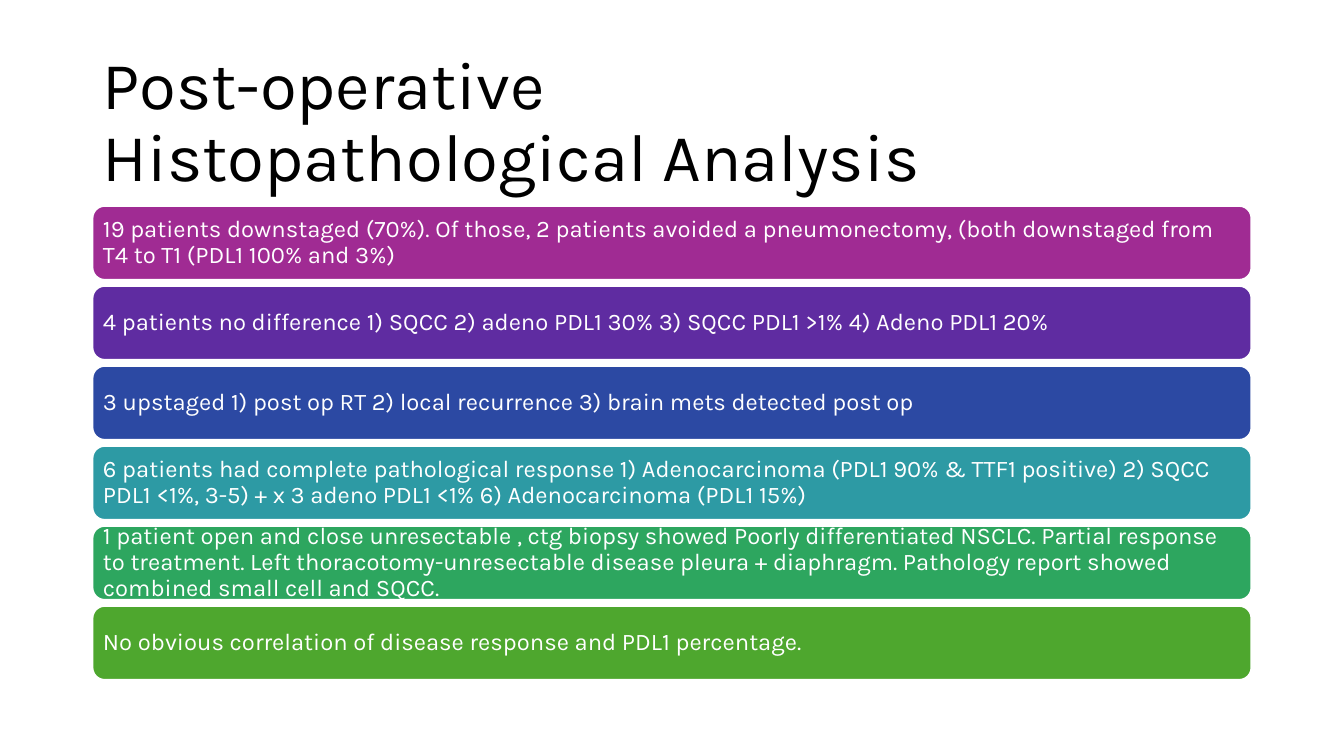
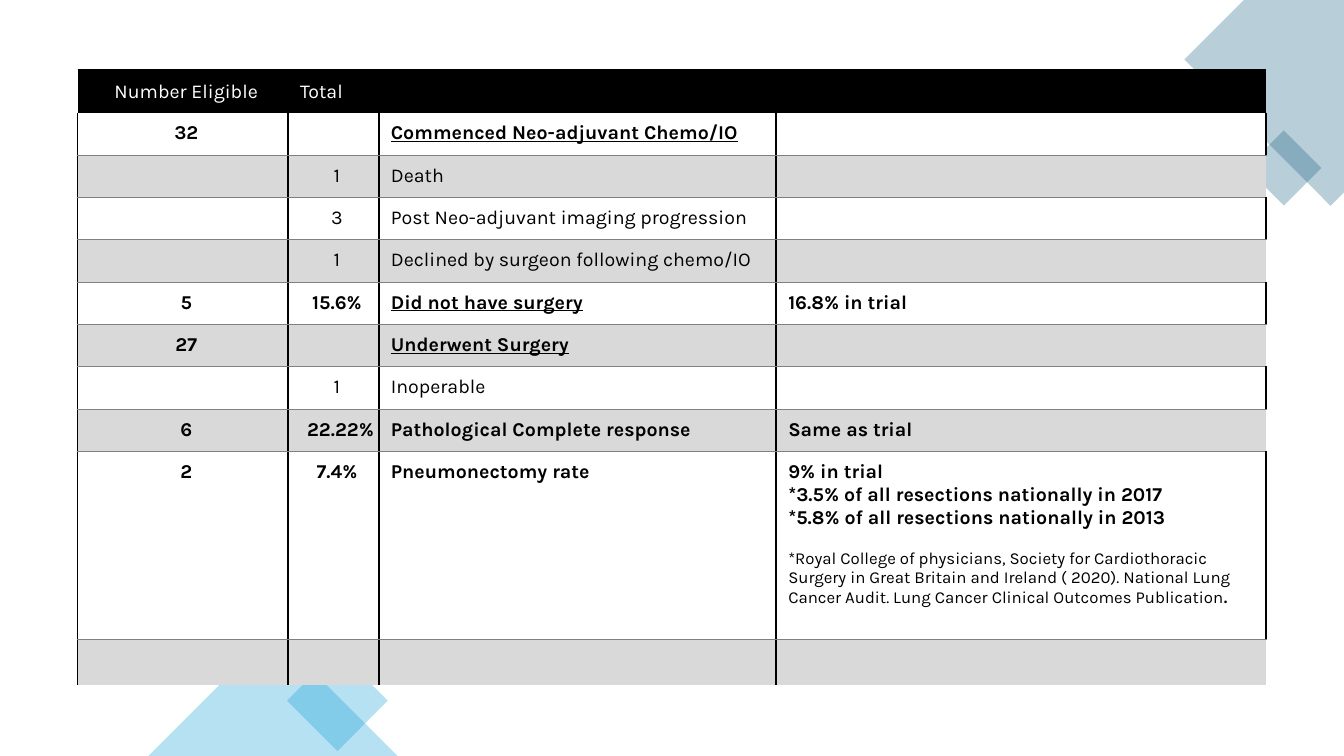
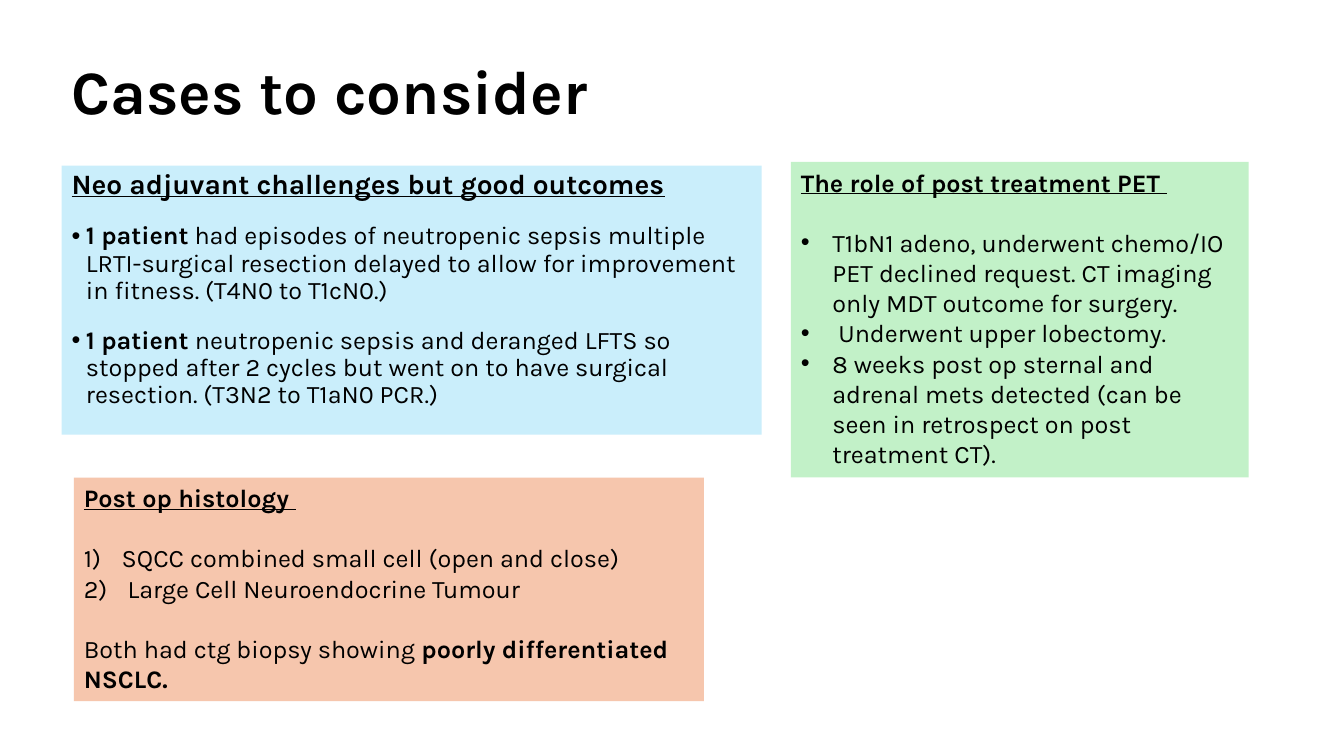
from dataclasses import dataclass

from lxml import etree
from pptx import Presentation
from pptx.dml.color import RGBColor
from pptx.enum.shapes import MSO_SHAPE
from pptx.enum.text import MSO_ANCHOR, PP_ALIGN
from pptx.oxml.ns import qn
from pptx.util import Pt

ROUNDED, RECTANGLE, TRIANGLE = (
    MSO_SHAPE.ROUNDED_RECTANGLE, MSO_SHAPE.RECTANGLE, MSO_SHAPE.ISOSCELES_TRIANGLE)
TOP, MIDDLE = MSO_ANCHOR.TOP, MSO_ANCHOR.MIDDLE
LEFT, CENTER, RIGHT = PP_ALIGN.LEFT, PP_ALIGN.CENTER, PP_ALIGN.RIGHT
NO_TABLE_STYLE = "{2D5ABB26-0587-4C30-8999-92F81FD0307C}"


@dataclass(frozen=True)
class Theme:
    font: str = "Karla"
    black: str = "000000"
    white: str = "FFFFFF"
    band: str = "D9D9D9"
    rule: str = "808080"
    teal: str = "156082"
    sky: str = "0F9ED5"
    pale_blue: str = "CAEEFB"
    pale_green: str = "C2F1C8"
    pale_orange: str = "F6C6AD"
    findings: tuple = ("A02B93", "5F2CA1", "2C49A3", "2D9AA4", "2DA65F", "4EA72E")
    long_title: float = 48
    title: float = 44
    heading: float = 20
    body: float = 18
    finding: float = 17
    cell: float = 14
    citation: float = 12
    tight: float = 0.9


theme = Theme()


def write(paragraph, text, size, color=theme.black, bold=False, underline=False,
          spacing=None, before=None, after=None, bullet=None, indent=0):
    """Fill a paragraph; text between ** marks is bold, bullet is a character or "1)"."""
    if bullet:
        properties = paragraph._p.get_or_add_pPr()
        properties.set("marL", str(Pt(indent)))
        properties.set("indent", str(-Pt(indent)))
        if bullet == "1)":
            etree.SubElement(properties, qn("a:buAutoNum"), type="arabicParenR")
        else:
            etree.SubElement(properties, qn("a:buFont"), typeface="Arial")
            etree.SubElement(properties, qn("a:buChar"), char=bullet)
    if spacing:
        paragraph.line_spacing = spacing
    if before:
        paragraph.space_before = Pt(before)
    if after:
        paragraph.space_after = Pt(after)
    font = paragraph.font
    font.name, font.size = theme.font, Pt(size)
    font.bold, font.underline = bold, underline
    font.color.rgb = RGBColor.from_string(color)
    for position, piece in enumerate(text.split("**")):
        if piece:
            run = paragraph.add_run()
            run.text = piece
            if position % 2:
                run.font.bold = True


def add_text_box(slide, left, top, width, height, anchor=TOP, fill=None):
    box = slide.shapes.add_textbox(Pt(left), Pt(top), Pt(width), Pt(height))
    box.text_frame.word_wrap = True
    box.text_frame.vertical_anchor = anchor
    if fill:
        box.fill.solid()
        box.fill.fore_color.rgb = RGBColor.from_string(fill)
    return box.text_frame


presentation = Presentation()
presentation.slide_width, presentation.slide_height = Pt(960), Pt(540)
blank = presentation.slide_layouts[6]

# Slide 1: findings
slide = presentation.slides.add_slide(blank)
frame = add_text_box(slide, 66, 44, 828, 89, MIDDLE)
frame.margin_right = Pt(160)
write(frame.paragraphs[0], "Post-operative Histopathological Analysis",
      theme.long_title, spacing=theme.tight)

findings = [
    "19 patients downstaged (70%). Of those, 2 patients avoided a pneumonectomy, "
    "(both downstaged from T4 to T1 (PDL1 100% and 3%)",
    "4 patients no difference 1) SQCC 2) adeno PDL1 30% 3) SQCC PDL1 >1% 4) Adeno PDL1 20%",
    "3 upstaged 1) post op RT 2) local recurrence 3) brain mets detected post op",
    "6 patients had complete pathological response 1) Adenocarcinoma (PDL1 90% & TTF1 "
    "positive) 2) SQCC PDL1 <1%, 3-5) + x 3 adeno PDL1 <1% 6) Adenocarcinoma (PDL1 15%)",
    "1 patient open and close unresectable , ctg biopsy showed Poorly differentiated NSCLC. "
    "Partial response to treatment. Left thoracotomy-unresectable disease pleura + diaphragm. "
    "Pathology report showed combined small cell and SQCC.",
    "No obvious correlation of disease response and PDL1 percentage.",
]
for index, (finding, color) in enumerate(zip(findings, theme.findings)):
    bar = slide.shapes.add_shape(ROUNDED, Pt(66), Pt(147 + 57.15 * index), Pt(828), Pt(53))
    bar.shadow.inherit = False
    bar.fill.solid()
    bar.fill.fore_color.rgb = RGBColor.from_string(color)
    bar.line.color.rgb = RGBColor.from_string(theme.white)
    bar.line.width = Pt(1.5)
    frame = bar.text_frame
    frame.word_wrap = True
    frame.vertical_anchor = MIDDLE
    frame.margin_left = frame.margin_right = frame.margin_top = frame.margin_bottom = Pt(5)
    paragraph = frame.paragraphs[0]
    paragraph.alignment = LEFT
    write(paragraph, finding, theme.finding, theme.white, spacing=theme.tight)

# Slide 2: outcome table over corner decorations
slide = presentation.slides.add_slide(blank)
outline = slide.shapes.build_freeform(Pt(960), Pt(0))
outline.add_line_segments(
    [(Pt(x), Pt(y)) for x, y in [(888.5, 0), (846, 42.5), (950.4, 147), (960, 137.5)]])
decorations = [(outline.convert_to_shape(), theme.teal, 0)]
for preset, left, top, width, height, color, rotation in [
    (RECTANGLE, 898, 101, 38, 38, theme.teal, 45),
    (RECTANGLE, 215.5, 475, 51, 51, theme.sky, 45),
    (TRIANGLE, 106, 451, 178, 89, theme.sky, 0),
]:
    shape = slide.shapes.add_shape(preset, Pt(left), Pt(top), Pt(width), Pt(height))
    decorations.append((shape, color, rotation))
for shape, color, rotation in decorations:
    shape.rotation = rotation
    shape.shadow.inherit = False
    shape.line.fill.background()
    shape.fill.solid()
    shape.fill.fore_color.rgb = RGBColor.from_string(color)
    color_element = shape._element.spPr.find(qn("a:solidFill")).find(qn("a:srgbClr"))
    etree.SubElement(color_element, qn("a:alpha"), val="30000")

# Each row: its four texts, and the columns that are bold and underlined
rows = [
    (["Number Eligible", "Total", "", ""], (), ()),
    (["32", "", "Commenced Neo-adjuvant Chemo/IO", ""], (0, 2), (2,)),
    (["", "1", "Death", ""], (), ()),
    (["", "3", "Post Neo-adjuvant imaging progression", ""], (), ()),
    (["", "1", "Declined by surgeon following chemo/IO", ""], (), ()),
    (["5", "15.6%", "Did not have surgery", "16.8% in trial"], (0, 1, 2, 3), (2,)),
    (["27", "", "Underwent Surgery", ""], (0, 2), (2,)),
    (["", "1", "Inoperable", ""], (), ()),
    (["6", "22.22%", "Pathological Complete response", "Same as trial"], (0, 1, 2, 3), ()),
    (["2", "7.4%", "Pneumonectomy rate", "9% in trial"], (0, 1, 2, 3), ()),
    (["", "", "", ""], (), ()),
]
column_widths = [150.5, 64.8, 283.9, 349.7]
row_heights = [30.25] * 9 + [134.5, 32.5]
graphic = slide.shapes.add_table(len(rows), 4, Pt(55.4), Pt(50.2),
                                 Pt(sum(column_widths)), Pt(sum(row_heights)))
table = graphic.table
table.first_row = table.horz_banding = False
table._tbl.tblPr.find(qn("a:tableStyleId")).text = NO_TABLE_STYLE
for column, width in zip(table.columns, column_widths):
    column.width = Pt(width)

side, thin = (theme.black, 1.5), (theme.rule, 0.5)
for row_index, (texts, bold_columns, underlined_columns) in enumerate(rows):
    table.rows[row_index].height = Pt(row_heights[row_index])
    header, banded = row_index == 0, row_index > 0 and row_index % 2 == 0
    for column_index, text in enumerate(texts):
        cell = table.cell(row_index, column_index)
        cell.margin_left, cell.margin_right = Pt(8.5), Pt(3.6)
        cell.margin_top = cell.margin_bottom = Pt(6.5)
        cell.vertical_anchor = MIDDLE if header else TOP
        paragraph = cell.text_frame.paragraphs[0]
        if column_index == 0 or (column_index == 1 and not header):
            paragraph.alignment = RIGHT if text == "22.22%" else CENTER
        write(paragraph, text, theme.cell, theme.white if header else theme.black,
              bold=column_index in bold_columns, underline=column_index in underlined_columns)

        if header:
            borders = {"a:lnT": side}
        elif banded:
            borders = {"a:lnL": side, "a:lnR": side, "a:lnT": thin}
            if column_index == 3:
                del borders["a:lnR"]
        else:
            borders = {"a:lnL": side, "a:lnR": side, "a:lnB": thin}
        properties = cell._tc.get_or_add_tcPr()
        for tag, (color, width) in borders.items():
            line = etree.SubElement(properties, qn(tag), w=str(Pt(width)))
            fill = etree.SubElement(line, qn("a:solidFill"))
            etree.SubElement(fill, qn("a:srgbClr"), val=color)
        cell.fill.solid()
        cell.fill.fore_color.rgb = RGBColor.from_string(
            theme.black if header else theme.band if banded else theme.white)

trial_frame = table.cell(9, 3).text_frame
for note in ["*3.5% of all resections nationally in 2017",
             "*5.8% of all resections nationally in 2013"]:
    write(trial_frame.add_paragraph(), note, theme.cell, bold=True)
write(trial_frame.add_paragraph(),
      "*Royal College of physicians, Society for Cardiothoracic Surgery in Great Britain and "
      "Ireland ( 2020). National Lung Cancer Audit. Lung Cancer Clinical Outcomes "
      "Publication**.**", theme.citation, before=14)

# Slide 3: cases
slide = presentation.slides.add_slide(blank)
frame = add_text_box(slide, 44, 15, 828, 104.5, MIDDLE)
write(frame.paragraphs[0], "Cases to consider", theme.title, bold=True, spacing=theme.tight)

airy = {"spacing": theme.tight, "before": 10, "after": 6}
case = {**airy, "bullet": "•", "indent": 10.3}
point = {"bullet": "•", "indent": 22.5}
number = {"bullet": "1)", "indent": 27}
gap = {"before": 21.3}
panels = [
    ((44, 118.3, 500, 192.3), theme.pale_blue, theme.heading, airy,
     "Neo adjuvant challenges but good outcomes", [
         ("**1 patient** had episodes of neutropenic sepsis multiple LRTI-surgical resection "
          "delayed to allow for improvement in fitness. (T4N0 to T1cN0.)", case),
         ("**1 patient **neutropenic sepsis and deranged LFTS so stopped after 2 cycles but "
          "went on to have surgical resection. (T3N2 to T1aN0 PCR.)", case)]),
    ((565, 115.7, 327, 225.3), theme.pale_green, theme.body, {},
     "The role of post treatment PET ", [
         ("T1bN1 adeno, underwent chemo/IO PET declined request. CT imaging only MDT outcome "
          "for surgery.", {**point, **gap}),
         (" Underwent upper lobectomy.", point),
         ("8 weeks post op sternal and adrenal mets detected (can be seen in retrospect on "
          "post treatment CT).", point)]),
    ((52.8, 341.2, 450, 159.6), theme.pale_orange, theme.body, {},
     "Post op histology ", [
         ("SQCC combined small cell (open and close)", {**number, **gap}),
         (" Large Cell Neuroendocrine Tumour", number),
         ("Both had ctg biopsy showing **poorly differentiated NSCLC.**", gap)]),
]
for position, color, heading_size, heading_style, heading, items in panels:
    frame = add_text_box(slide, *position, fill=color)
    write(frame.paragraphs[0], heading, heading_size, bold=True, underline=True, **heading_style)
    for text, style in items:
        write(frame.add_paragraph(), text, theme.body, **style)

presentation.save("out.pptx")
